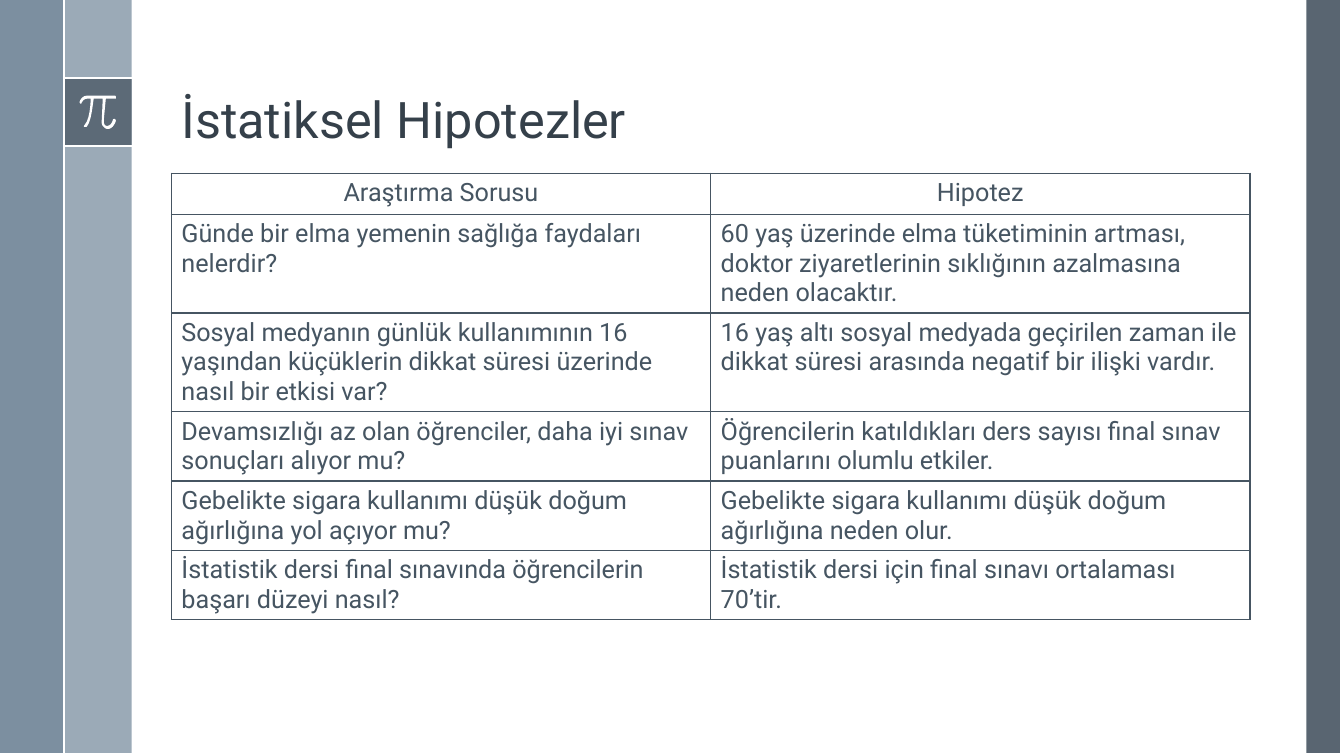
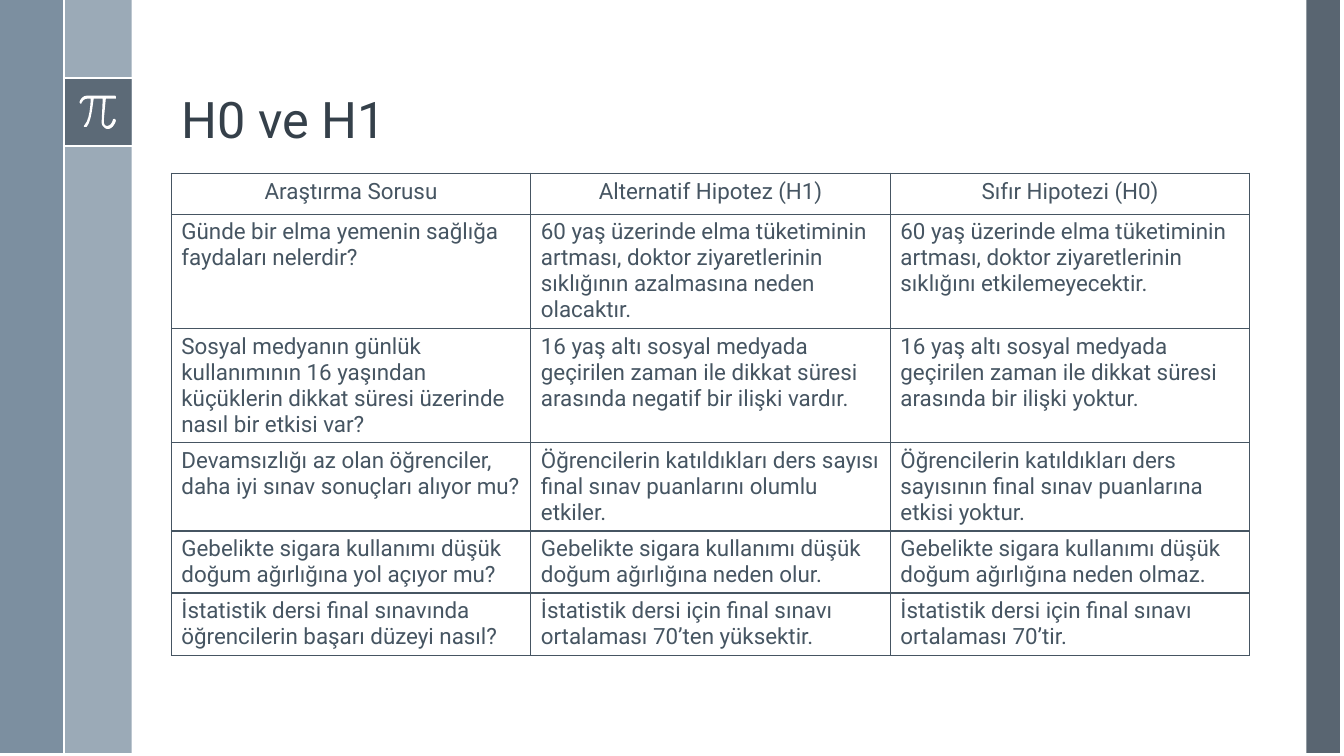
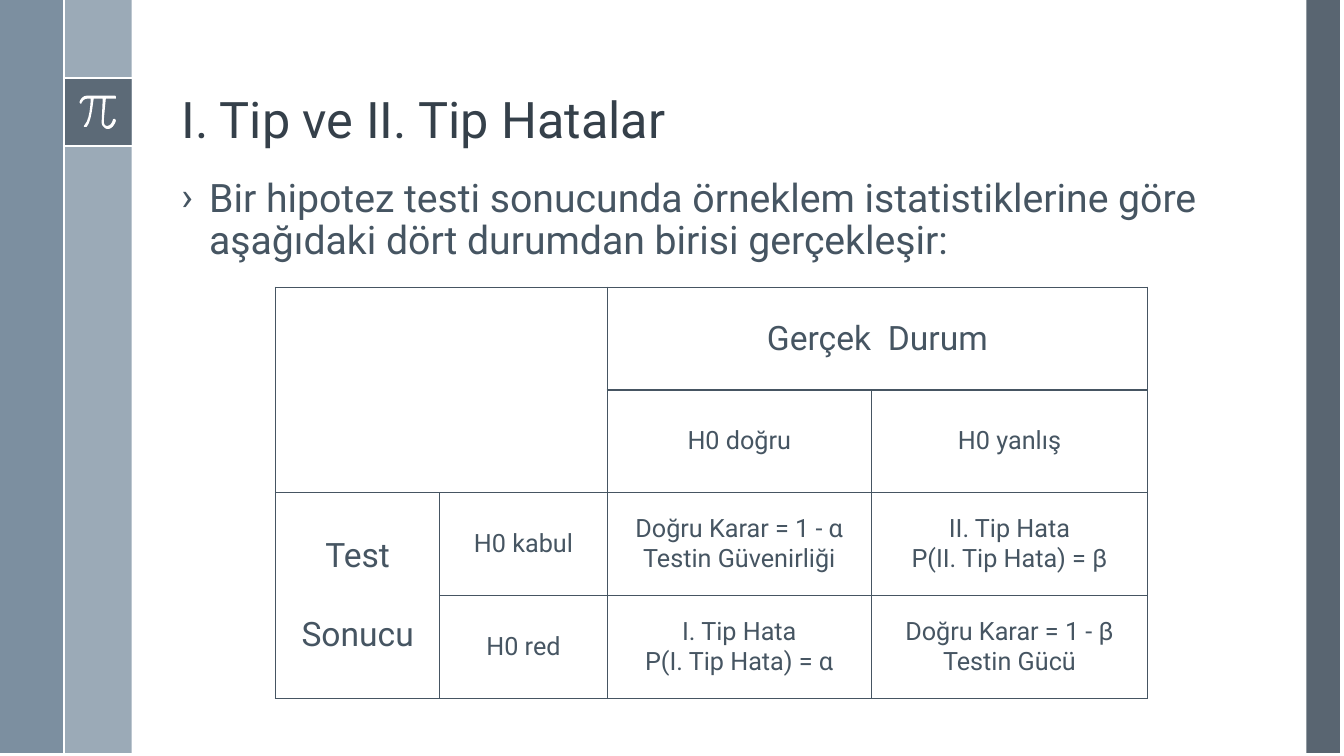
from lxml.etree import SubElement
from pptx import Presentation
from pptx.dml.color import RGBColor
from pptx.enum.shapes import MSO_CONNECTOR, MSO_SHAPE
from pptx.enum.text import MSO_ANCHOR, MSO_AUTO_SIZE, PP_ALIGN
from pptx.oxml.ns import qn
from pptx.util import Pt

FONT = "Roboto"
TITLE_COLOR = "35404A"
TEXT_COLOR = "465562"
DARK = "475562"
MIDDLE = "6A8093"
LIGHT = "9BAAB7"
WHITE = "FFFFFF"

CONTENT_LEFT, CONTENT_TOP, CONTENT_WIDTH = 122.4, 123.8, 770.4
BAND_TOP, BAND_WIDTH, SLIDE_HEIGHT = -2.2, 48, 540
BAND_LEFT = 46
BADGE_TOP = 56

PI_START = (114, 95)
PI_SEGMENTS = [
    (86, 95), (81, 95, 79, 101, 79, 101), (79, 102, 79, 102, 80, 103),
    (80, 103), (81, 103, 81, 102, 81, 102), (81, 102, 83, 98, 86, 98),
    (90, 98), (90, 103, 89, 119, 84, 124), (83, 125, 83, 126, 84, 126),
    (84, 126, 85, 126, 85, 126), (85, 126, 86, 126, 86, 126),
    (91, 120, 92, 103, 93, 98), (102, 98), (101, 119),
    (101, 119, 100, 124, 103, 126), (104, 127, 105, 128, 107, 128),
    (107, 128, 107, 128, 108, 128), (113, 127, 115, 120, 115, 120),
    (115, 119, 114, 118, 114, 118), (113, 118, 112, 118, 112, 119),
    (112, 119, 111, 124, 107, 125), (106, 125, 105, 125, 104, 124),
    (103, 123, 103, 120, 103, 119), (105, 98), (114, 98),
    (115, 98, 115, 98, 115, 97), (115, 96, 115, 95, 114, 95),
]

QUESTIONS = [
    "Günde bir elma yemenin sağlığa faydaları nelerdir?",
    "Sosyal medyanın günlük kullanımının 16 yaşından küçüklerin dikkat süresi "
    "üzerinde nasıl bir etkisi var?",
    "Devamsızlığı az olan öğrenciler, daha iyi sınav sonuçları alıyor mu?",
    "Gebelikte sigara kullanımı düşük doğum ağırlığına yol açıyor mu?",
    "İstatistik dersi final sınavında öğrencilerin başarı düzeyi nasıl?",
]
ALTERNATIVES = [
    "60 yaş üzerinde elma tüketiminin artması, doktor ziyaretlerinin sıklığının "
    "azalmasına neden olacaktır.",
    "16 yaş altı sosyal medyada geçirilen zaman ile dikkat süresi arasında "
    "negatif bir ilişki vardır.",
    "Öğrencilerin katıldıkları ders sayısı final sınav puanlarını olumlu etkiler.",
    "Gebelikte sigara kullanımı düşük doğum ağırlığına neden olur.",
    "İstatistik dersi için final sınavı ortalaması 70’ten yüksektir.",
]
NULLS = [
    "60 yaş üzerinde elma tüketiminin artması, doktor ziyaretlerinin sıklığını "
    "etkilemeyecektir.",
    "16 yaş altı sosyal medyada geçirilen zaman ile dikkat süresi arasında bir "
    "ilişki yoktur.",
    "Öğrencilerin katıldıkları ders sayısının final sınav puanlarına etkisi yoktur.",
    "Gebelikte sigara kullanımı düşük doğum ağırlığına neden olmaz.",
    "İstatistik dersi için final sınavı ortalaması 70’tir.",
]
ERROR_ROWS = [
    ["", "", "Gerçek  Durum", ""],
    ["", "", "H0 doğru", "H0 yanlış"],
    ["Test\nSonucu", "H0 kabul", "Doğru Karar = 1 - α\nTestin Güvenirliği",
     "II. Tip Hata\nP(II. Tip Hata) = β"],
    ["", "H0 red", "I. Tip Hata\nP(I. Tip Hata) = α",
     "Doğru Karar = 1 - β\nTestin Gücü"],
]


def rgb(color):
    """Turn a hex string into a colour."""
    return RGBColor.from_string(color)


def write_text(frame, text, size=18, color=TEXT_COLOR, align=PP_ALIGN.LEFT,
               anchor=None, line_spacing=None, gap=0):
    """Write one paragraph for each line of text, with a gap between them."""
    frame.word_wrap = True
    if anchor is not None:
        frame.vertical_anchor = anchor
    for index, line in enumerate(text.split("\n")):
        paragraph = frame.add_paragraph() if index else frame.paragraphs[0]
        paragraph.alignment = align
        paragraph.space_before = Pt(gap if index else 0)
        if line_spacing:
            paragraph.line_spacing = line_spacing
        run = paragraph.add_run()
        run.text = line
        run.font.size = Pt(size)
        run.font.name = FONT
        run.font.color.rgb = rgb(color)


def paint(shape, color, opacity=100):
    """Give a shape a plain fill without outline or shadow."""
    shape.shadow.inherit = False
    shape.fill.solid()
    shape.fill.fore_color.rgb = rgb(color)
    shape.line.fill.background()
    if opacity < 100:
        tint = shape.element.spPr.find(qn("a:solidFill"))[0]
        SubElement(tint, qn("a:alpha"), val=str(opacity * 1000))


def add_band(slide, left, top, width, height, color, opacity=100):
    """Add a filled rectangle."""
    band = slide.shapes.add_shape(
        MSO_SHAPE.RECTANGLE, Pt(left), Pt(top), Pt(width), Pt(height))
    paint(band, color, opacity)


def add_rule(slide, left, top, right, bottom):
    """Add a thin white line."""
    rule = slide.shapes.add_connector(
        MSO_CONNECTOR.STRAIGHT, Pt(left), Pt(top), Pt(right), Pt(bottom))
    rule.line.color.rgb = rgb(WHITE)
    rule.line.width = Pt(1.5)
    SubElement(rule.element.spPr, qn("a:effectLst"))


def curve_points(start, controls, steps=6):
    """Sample a cubic curve that leaves from start."""
    knots = [start, controls[:2], controls[2:4], controls[4:]]
    for step in range(1, steps + 1):
        t = step / steps
        weights = ((1 - t) ** 3, 3 * t * (1 - t) ** 2, 3 * t * t * (1 - t), t ** 3)
        yield tuple(sum(w * knot[axis] for w, knot in zip(weights, knots))
                    for axis in (0, 1))


def add_pi(slide):
    """Add the white pi sign, given on a grid of 0.72 points."""
    outline = [PI_START]
    for segment in PI_SEGMENTS:
        if len(segment) == 2:
            outline.append(segment)
        else:
            outline.extend(curve_points(outline[-1], segment))
    points = [(Pt(0.72 * x), Pt(0.72 * y)) for x, y in outline]
    builder = slide.shapes.build_freeform(*points[0])
    builder.add_line_segments(points[1:], close=True)
    paint(builder.convert_to_shape(), WHITE)


def decorate_master(slide, master):
    """Draw the bands and the pi badge on a slide and move them to its master."""
    add_band(slide, 933.1, BAND_TOP, 24, SLIDE_HEIGHT, DARK, 90)
    add_band(slide, BAND_LEFT, BAND_TOP, BAND_WIDTH, SLIDE_HEIGHT, LIGHT)
    add_band(slide, BAND_LEFT - 48.8, BAND_TOP, BAND_WIDTH, SLIDE_HEIGHT, MIDDLE, 88)
    add_band(slide, BAND_LEFT, BADGE_TOP, BAND_WIDTH, BAND_WIDTH, DARK, 75)
    for top in (BADGE_TOP, BADGE_TOP + BAND_WIDTH):
        add_rule(slide, BAND_LEFT, top, BAND_LEFT + BAND_WIDTH, top)
    add_pi(slide)
    add_rule(slide, BAND_LEFT, BAND_TOP, BAND_LEFT, BAND_TOP + SLIDE_HEIGHT)
    tree = master.element.cSld.spTree
    ornaments = [shape for shape in slide.shapes if not shape.is_placeholder]
    for index, ornament in enumerate(ornaments):
        ornament.element.xpath(".//p:cNvPr")[0].set("id", str(20 + index))
        tree.insert(2 + index, ornament.element)


def place(shape, left, top, width, height):
    """Move and size a placeholder."""
    shape.left, shape.top = Pt(left), Pt(top)
    shape.width, shape.height = Pt(width), Pt(height)


def add_titled_slide(deck, layout_name, title):
    """Add a slide with a formatted title."""
    slide = deck.slides.add_slide(deck.slide_layouts.get_by_name(layout_name))
    heading = slide.shapes.title
    place(heading, CONTENT_LEFT, 12.2, CONTENT_WIDTH, 98)
    heading.text_frame.auto_size = MSO_AUTO_SIZE.NONE
    write_text(heading.text_frame, title, size=36, color=TITLE_COLOR,
               anchor=MSO_ANCHOR.BOTTOM, line_spacing=0.9)
    return slide


def fill_body(slide, text):
    """Write a bulleted statement in the body placeholder."""
    body = slide.placeholders[1]
    place(body, CONTENT_LEFT, CONTENT_TOP, CONTENT_WIDTH, 360)
    body.text_frame.auto_size = MSO_AUTO_SIZE.NONE
    write_text(body.text_frame, text, size=28, anchor=MSO_ANCHOR.TOP,
               line_spacing=0.9)
    for paragraph in body.text_frame.paragraphs:
        paragraph.space_before = Pt(14)
        properties = paragraph._p.get_or_add_pPr()
        properties.set("marL", str(Pt(19.8)))
        properties.set("indent", str(-Pt(19.8)))
        SubElement(properties, qn("a:buFont"), typeface=FONT)
        SubElement(properties, qn("a:buChar"), char="›")


def outline_cell(cell):
    """Give a cell thin borders on all sides and no fill."""
    properties = cell._tc.get_or_add_tcPr()
    for side in ("lnL", "lnR", "lnT", "lnB"):
        border = SubElement(properties, qn("a:" + side), w=str(Pt(1)))
        ink = SubElement(border, qn("a:solidFill"))
        SubElement(ink, qn("a:srgbClr"), val=TEXT_COLOR)
    cell.fill.background()


def add_grid(slide, left, top, widths, row_height, rows, style):
    """Add an outlined table; style(row, column) gives the text format."""
    table = slide.shapes.add_table(
        len(rows), len(widths), Pt(left), Pt(top),
        Pt(sum(widths)), Pt(row_height * len(rows))).table
    table.first_row = table.horz_banding = False
    for column, width in zip(table.columns, widths):
        column.width = Pt(width)
    for row_index, texts in enumerate(rows):
        table.rows[row_index].height = Pt(row_height)
        for column_index, text in enumerate(texts):
            cell = table.cell(row_index, column_index)
            outline_cell(cell)
            if text:
                format_options = dict(style(row_index, column_index))
                cell.vertical_anchor = format_options.pop("cell_anchor", None)
                write_text(cell.text_frame, text, **format_options)
    return table


def add_hypothesis_grid(slide, headers, columns, size):
    """Add a full-width table with a centred header row."""
    def style(row, _column):
        """Centre the header row only."""
        return {"size": size, "align": PP_ALIGN.LEFT if row else PP_ALIGN.CENTER}

    widths = [CONTENT_WIDTH / len(headers)] * len(headers)
    add_grid(slide, CONTENT_LEFT, CONTENT_TOP, widths, 29.2,
             [headers, *zip(*columns)], style)


def error_style(row, column):
    """Centre every cell and enlarge the two group headings."""
    is_heading = (row, column) in ((0, 2), (2, 0))
    return {"size": 24 if is_heading else 18, "gap": 28 if is_heading else 0,
            "align": PP_ALIGN.CENTER, "cell_anchor": MSO_ANCHOR.MIDDLE}


def add_error_grid(slide):
    """Add the decision table for the two error types."""
    table = add_grid(slide, 196.8, 205.2, [117.4, 119.5, 188.8, 197.3], 73.4,
                     ERROR_ROWS, error_style)
    for first, last in (((0, 0), (1, 1)), ((0, 2), (0, 3)), ((2, 0), (3, 0))):
        table.cell(*first).merge(table.cell(*last))


def main():
    """Build and save the three slides."""
    deck = Presentation()
    deck.slide_width, deck.slide_height = Pt(960), Pt(SLIDE_HEIGHT)

    hypotheses = add_titled_slide(deck, "Title Only", "İstatiksel Hipotezler")
    decorate_master(hypotheses, deck.slide_master)
    add_hypothesis_grid(hypotheses, ["Araştırma Sorusu", "Hipotez"],
                        [QUESTIONS, ALTERNATIVES[:-1] + NULLS[-1:]], 18)

    pairs = add_titled_slide(deck, "Title Only", "H0 ve H1")
    add_hypothesis_grid(
        pairs,
        ["Araştırma Sorusu", "Alternatif Hipotez (H1)", "Sıfır Hipotezi (H0)"],
        [QUESTIONS, ALTERNATIVES, NULLS], 16)

    errors = add_titled_slide(deck, "Title and Content", "I. Tip ve II. Tip Hatalar")
    fill_body(errors, "Bir hipotez testi sonucunda örneklem istatistiklerine göre "
                      "aşağıdaki dört durumdan birisi gerçekleşir:")
    add_error_grid(errors)

    deck.save("out.pptx")


if __name__ == "__main__":
    main()
